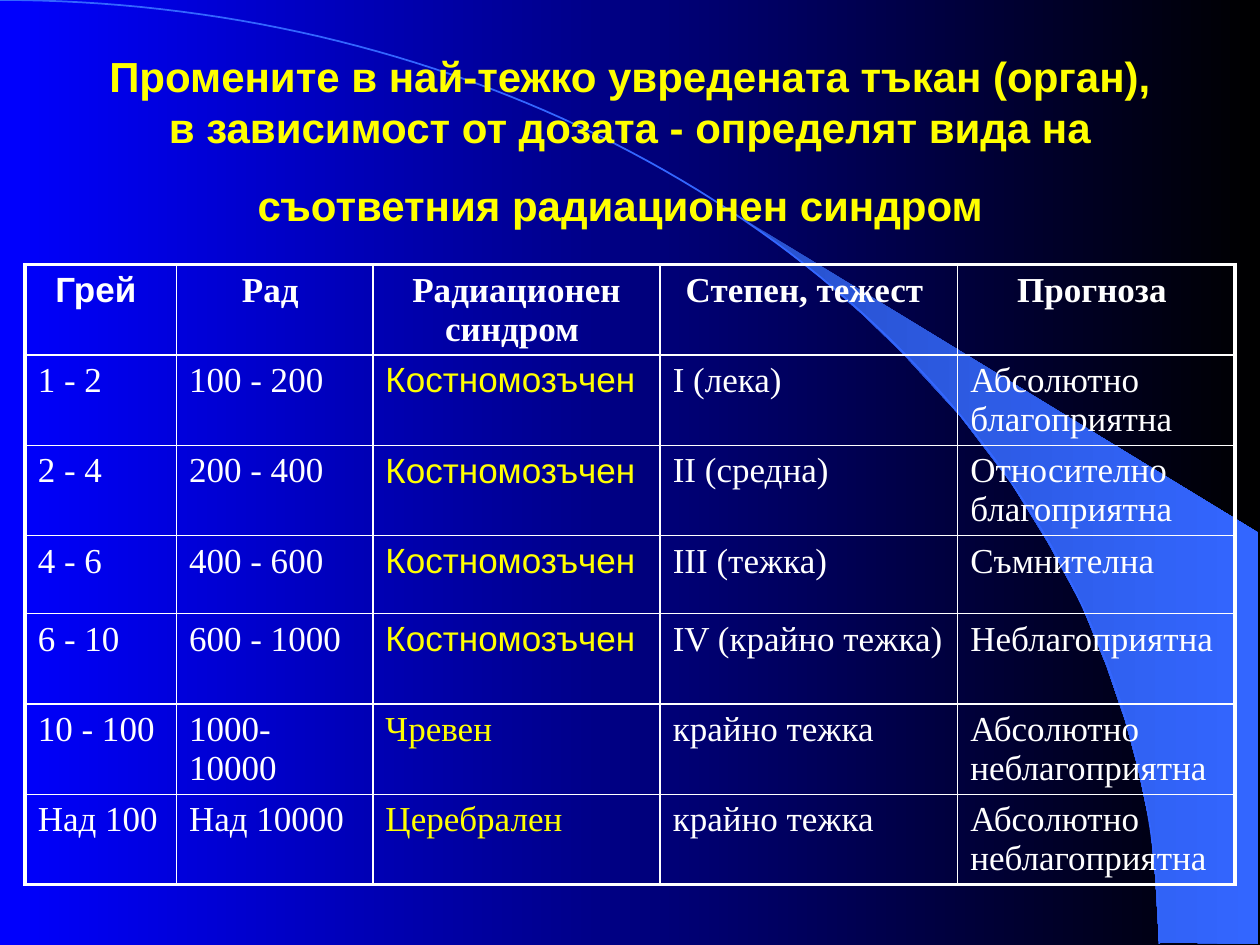
from dataclasses import dataclass
from math import cos, pi, sin

from lxml.etree import SubElement
from pptx import Presentation
from pptx.dml.color import RGBColor
from pptx.enum.text import MSO_ANCHOR, PP_ALIGN
from pptx.oxml.ns import qn
from pptx.util import Pt

WHITE, YELLOW, ARC_BLUE = "FFFFFF", "FFFF00", "3366FF"
SANS, SERIF = "Arial", "Times New Roman"
THIN, THICK = 1, 2.25

TITLE = ("Промените в най-тежко увредената тъкан (орган), в зависимост от дозата"
         " - определят вида на съответния радиационен синдром")
COLUMN_WIDTHS = [86.4, 112.3, 164.2, 170, 158.4]
ROW_HEIGHTS = [51.6, 51.6, 51.6, 44.6, 51.6, 51.6, 51.6]
ROWS = [
    ["Грей ", "Рад ", "Радиационен синдром ", "Степен, тежест ", "Прогноза "],
    ["1 - 2", "100 - 200", "Костномозъчен", "I (лека)", "Абсолютно благоприятна"],
    ["2 - 4", "200 - 400", "Костномозъчен", "IІ (средна)", "Относително благоприятна"],
    ["4 - 6", "400 - 600", "Костномозъчен", "IІІ (тежка)", "Съмнителна"],
    ["6 - 10", "600 - 1000", "Костномозъчен", "IV (крайно тежка)", "Неблагоприятна"],
    ["10 - 100", "1000- 10000", "Чревен", "крайно тежка", "Абсолютно неблагоприятна"],
    ["Над 100", "Над 10000", "Церебрален", "крайно тежка", "Абсолютно неблагоприятна"],
]
SYNDROME_COLUMN = 2
ARC_WIDTH, ARC_HEIGHT = 662.4, 539.3
CRESCENT = [
    (662.4, 538.6), (719.3, 539.3), (719.3, 304.6), (424.1, 124.6), (449.3, 143.3),
    (470.2, 159.8), (493.2, 180), (515.5, 201.6), (548.6, 237.6), (578.2, 276.5),
    (599, 310.3), (617.8, 344.9), (632.2, 380.2), (643, 411.8), (650.2, 438.5),
    (657.4, 472.3), (660.2, 501.1),
]


@dataclass
class TextStyle:
    font: str
    size: float
    color: str
    bold: bool = False


def rgb(color: str) -> RGBColor:
    return RGBColor.from_string(color)


def style_span(span, style: TextStyle) -> None:
    span.font.name = style.font
    span.font.size = Pt(style.size)
    span.font.bold = style.bold
    span.font.color.rgb = rgb(style.color)


def fill_gradient(fill, start: str, end: str) -> None:
    fill.gradient()
    fill.gradient_angle = 0
    for stop, color in zip(fill.gradient_stops, (start, end)):
        stop.color.rgb = rgb(color)


def add_outline(page, points: list, close: bool):
    builder = page.shapes.build_freeform(*map(Pt, points[0]))
    builder.add_line_segments([(Pt(x), Pt(y)) for x, y in points[1:]], close=close)
    shape = builder.convert_to_shape()
    shape.shadow.inherit = False
    return shape


def add_backdrop(page) -> None:
    fill_gradient(page.background.fill, "0000FF", "000000")
    crescent = add_outline(page, CRESCENT, close=True)
    fill_gradient(crescent.fill, "2851CC", ARC_BLUE)
    crescent.line.fill.background()

    steps = 90
    angles = [pi / 2 * step / steps for step in range(steps + 1)]
    arc_points = [(ARC_WIDTH * sin(a), ARC_HEIGHT * (1 - cos(a))) for a in angles]
    arc = add_outline(page, arc_points, close=False)
    arc.fill.background()
    arc.line.color.rgb = rgb(ARC_BLUE)
    arc.line.width = Pt(1)


def add_title(page) -> None:
    title = page.shapes.title
    title.left, title.top, title.width, title.height = Pt(54), Pt(26), Pt(612), Pt(111.6)
    frame = title.text_frame
    frame.word_wrap = True
    frame.vertical_anchor = MSO_ANCHOR.MIDDLE
    frame.text = TITLE
    para = frame.paragraphs[0]
    para.alignment = PP_ALIGN.CENTER
    style_span(para.runs[0], TextStyle(SANS, 24, YELLOW, bold=True))
    # The large closing space makes the last line taller.
    space = para.add_run()
    space.text = " "
    style_span(space, TextStyle(SANS, 40, YELLOW))
    page.shapes._spTree.append(title._element)  # in front of the backdrop


def set_borders(cell, widths: dict) -> None:
    properties = cell._tc.get_or_add_tcPr()
    for index, (side, width) in enumerate(widths.items()):
        line = SubElement(properties, qn(f"a:ln{side}"), w=str(Pt(width)))
        solid = SubElement(line, qn("a:solidFill"))
        SubElement(solid, qn("a:srgbClr"), val=WHITE)
        properties.insert(index, line)  # borders come before the fill


def cell_style(row: int, column: int) -> TextStyle:
    if row == 0:
        return TextStyle(SANS if column == 0 else SERIF, 20, WHITE, bold=True)
    if column == SYNDROME_COLUMN:
        return TextStyle(SANS if row < 5 else SERIF, 20, YELLOW)
    return TextStyle(SERIF, 20, WHITE)


def add_dose_table(page) -> None:
    last_row, last_column = len(ROWS) - 1, len(COLUMN_WIDTHS) - 1
    frame = page.shapes.add_table(len(ROWS), len(COLUMN_WIDTHS), Pt(14.4), Pt(151.2),
                                  Pt(sum(COLUMN_WIDTHS)), Pt(sum(ROW_HEIGHTS)))
    table = frame.table
    table.first_row = table.horz_banding = False
    for column, width in zip(table.columns, COLUMN_WIDTHS):
        column.width = Pt(width)
    for row, height in zip(table.rows, ROW_HEIGHTS):
        row.height = Pt(height)
    for r, texts in enumerate(ROWS):
        for c, text in enumerate(texts):
            cell = table.cell(r, c)
            cell.fill.background()
            cell.text_frame.text = text
            para = cell.text_frame.paragraphs[0]
            para.alignment = PP_ALIGN.CENTER if r == 0 else PP_ALIGN.LEFT
            style_span(para.runs[0], cell_style(r, c))
            set_borders(cell, {
                "L": THICK if c == 0 else THIN,
                "R": THICK if c == last_column else THIN,
                "T": THICK if r == 0 else THIN,
                "B": THICK if r == last_row else THIN,
            })


def main() -> None:
    deck = Presentation()
    deck.slide_width, deck.slide_height = Pt(720), Pt(540)
    page = deck.slides.add_slide(deck.slide_layouts[5])
    add_backdrop(page)
    add_title(page)
    add_dose_table(page)
    deck.save("out.pptx")


if __name__ == "__main__":
    main()
